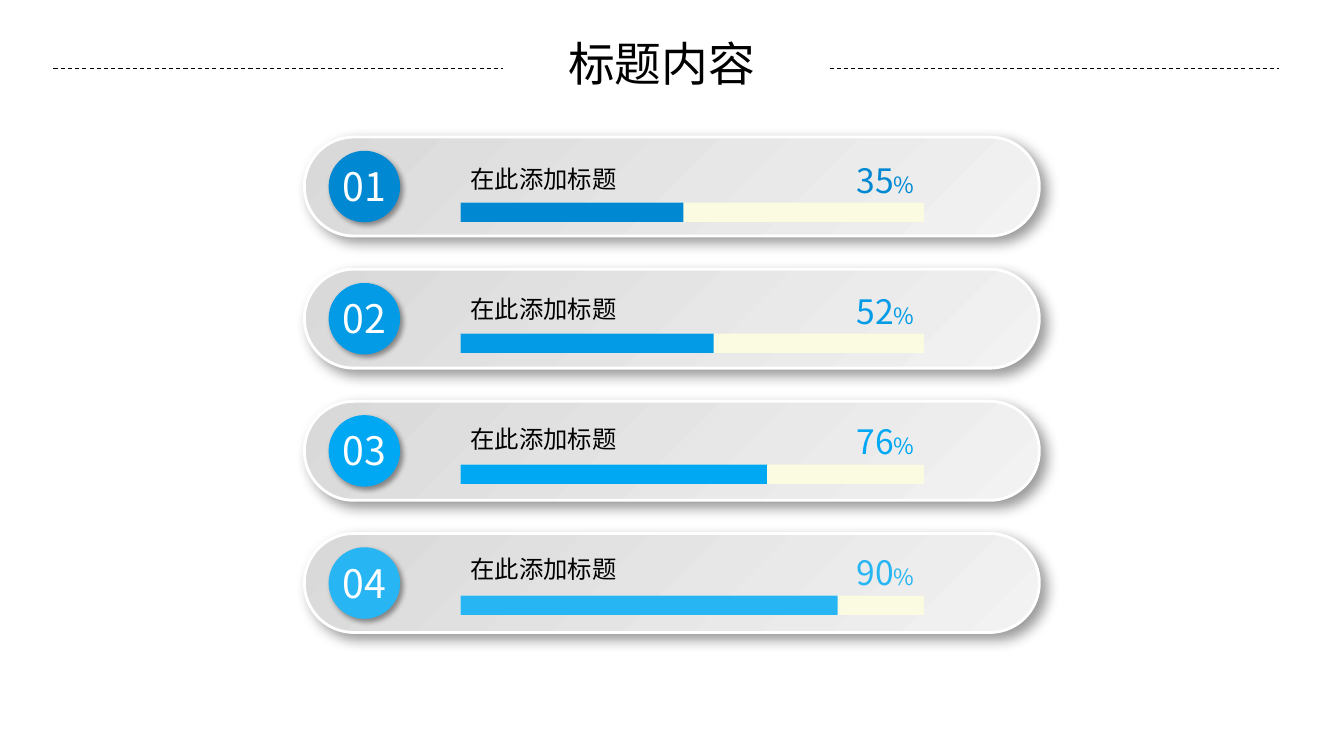
from lxml.etree import SubElement
from pptx import Presentation
from pptx.dml.color import RGBColor
from pptx.enum.dml import MSO_LINE
from pptx.enum.shapes import MSO_CONNECTOR, MSO_SHAPE as Shape
from pptx.enum.text import MSO_ANCHOR, PP_ALIGN as Align
from pptx.oxml.ns import qn
from pptx.util import Pt

BLACK = RGBColor(0x00, 0x00, 0x00)
WHITE = RGBColor(0xFF, 0xFF, 0xFF)
PILL_DARK = RGBColor(0xD9, 0xD9, 0xD9)
PILL_LIGHT = RGBColor(0xF2, 0xF2, 0xF2)
TRACK = RGBColor(0xFB, 0xFB, 0xE2)
BLUES = (
    RGBColor(0x00, 0x89, 0xD2),
    RGBColor(0x03, 0x9B, 0xE6),
    RGBColor(0x00, 0xA7, 0xF3),
    RGBColor(0x28, 0xB5, 0xF4),
)

# Percentage shown and drawn bar length of each row
ROWS = (("35", 159.1), ("52", 180.7), ("76", 218.9), ("90", 269.3))
PILL_LEFT, PILL_WIDTH, PILL_HEIGHT = 217.4, 525, 70.7
DISC = 51.1
BAR_LEFT, BAR_WIDTH, BAR_HEIGHT = 329, 331.2, 13.8
PERCENT_WIDTH = 75.6


class Painter:
    font = "Noto Sans CJK SC"

    def __init__(self, page):
        self.page = page

    def shape(self, kind, left, top, width, height, fill=None, shadow=None):
        """Add a borderless shape; shadow is a (blur, distance) pair."""
        shape = self.page.shapes.add_shape(
            kind, Pt(left), Pt(top), Pt(width), Pt(height))
        shape.shadow.inherit = False
        shape.line.fill.background()
        if fill is not None:
            shape.fill.solid()
            shape.fill.fore_color.rgb = fill
        if shadow:
            blur, distance = shadow
            effects = shape.element.spPr.find(qn("a:effectLst"))
            outer = SubElement(
                effects, qn("a:outerShdw"), blurRad=str(Pt(blur)),
                dist=str(Pt(distance)), dir="2700000", algn="tl",
                rotWithShape="0")
            color = SubElement(outer, qn("a:srgbClr"), val=str(BLACK))
            SubElement(color, qn("a:alpha"), val="40000")
        return shape

    def pill(self, left, top, width, height):
        pill = self.shape(Shape.ROUNDED_RECTANGLE, left, top, width, height,
                          shadow=(9, 5))
        pill.adjustments[0] = 0.5
        pill.fill.gradient()
        pill.fill.gradient_angle = 315
        for stop, color in zip(pill.fill.gradient_stops,
                               (PILL_DARK, PILL_LIGHT)):
            stop.color.rgb = color
        pill.line.color.rgb = WHITE
        pill.line.width = Pt(2)

    def dashed_line(self, start, end, y):
        line = self.page.shapes.add_connector(
            MSO_CONNECTOR.STRAIGHT, Pt(start), Pt(y), Pt(end), Pt(y))
        line.line.color.rgb = BLACK
        line.line.width = Pt(0.75)
        line.line.dash_style = MSO_LINE.DASH
        SubElement(line.element.spPr, qn("a:effectLst"))

    def text(self, words, left, top, width, height, size=18, color=BLACK,
             align=Align.LEFT, suffix="", suffix_size=16):
        """Add one vertically centred line, with an optional smaller suffix."""
        box = self.page.shapes.add_textbox(
            Pt(left), Pt(top), Pt(width), Pt(height))
        frame = box.text_frame
        frame.word_wrap = True
        frame.vertical_anchor = MSO_ANCHOR.MIDDLE
        frame.margin_top = frame.margin_bottom = 0
        para = frame.paragraphs[0]
        para.alignment = align
        for part, points in ((words, size), (suffix, suffix_size)):
            if not part:
                continue
            span = para.add_run()
            span.text = part
            span.font.size = Pt(points)
            span.font.name = self.font
            span.font.color.rgb = color
            SubElement(span.font._element, qn("a:ea"), typeface=self.font)


def main():
    deck = Presentation()
    deck.slide_width, deck.slide_height = Pt(960), Pt(540)
    painter = Painter(deck.slides.add_slide(deck.slide_layouts[6]))

    painter.text("标题内容", 389.5, 20.9, 166.3, 47.5, size=33.4,
                 align=Align.CENTER)
    for start, end in ((592.6, 913.7), (38.2, 359.3)):
        painter.dashed_line(start, end, 49)

    for index, ((percent, length), blue) in enumerate(zip(ROWS, BLUES)):
        pill_top = 97.9 + index * 94.4
        painter.pill(PILL_LEFT, pill_top, PILL_WIDTH, PILL_HEIGHT)
        painter.shape(Shape.OVAL, 234.7, pill_top + (PILL_HEIGHT - DISC) / 2,
                      DISC, DISC, fill=blue, shadow=(4, 3))
        painter.text(f"{index + 1:02}", 231.1, pill_top + 14.4, 58.3, 41,
                     size=28, color=WHITE, align=Align.CENTER)

        bar_top = 144.7 + index * 93.6
        for width, color in ((BAR_WIDTH, TRACK), (length, blue)):
            painter.shape(Shape.RECTANGLE, BAR_LEFT, bar_top, width,
                          BAR_HEIGHT, fill=color)
        painter.text("在此添加标题", BAR_LEFT, 113.9 + index * 92.9, 180.7, 28,
                     size=17.4)
        painter.text(percent, BAR_LEFT + BAR_WIDTH - PERCENT_WIDTH,
                     110.6 + index * 93.4, PERCENT_WIDTH, 36, size=24,
                     color=blue, align=Align.RIGHT, suffix="%")

    deck.save("out.pptx")


if __name__ == "__main__":
    main()
